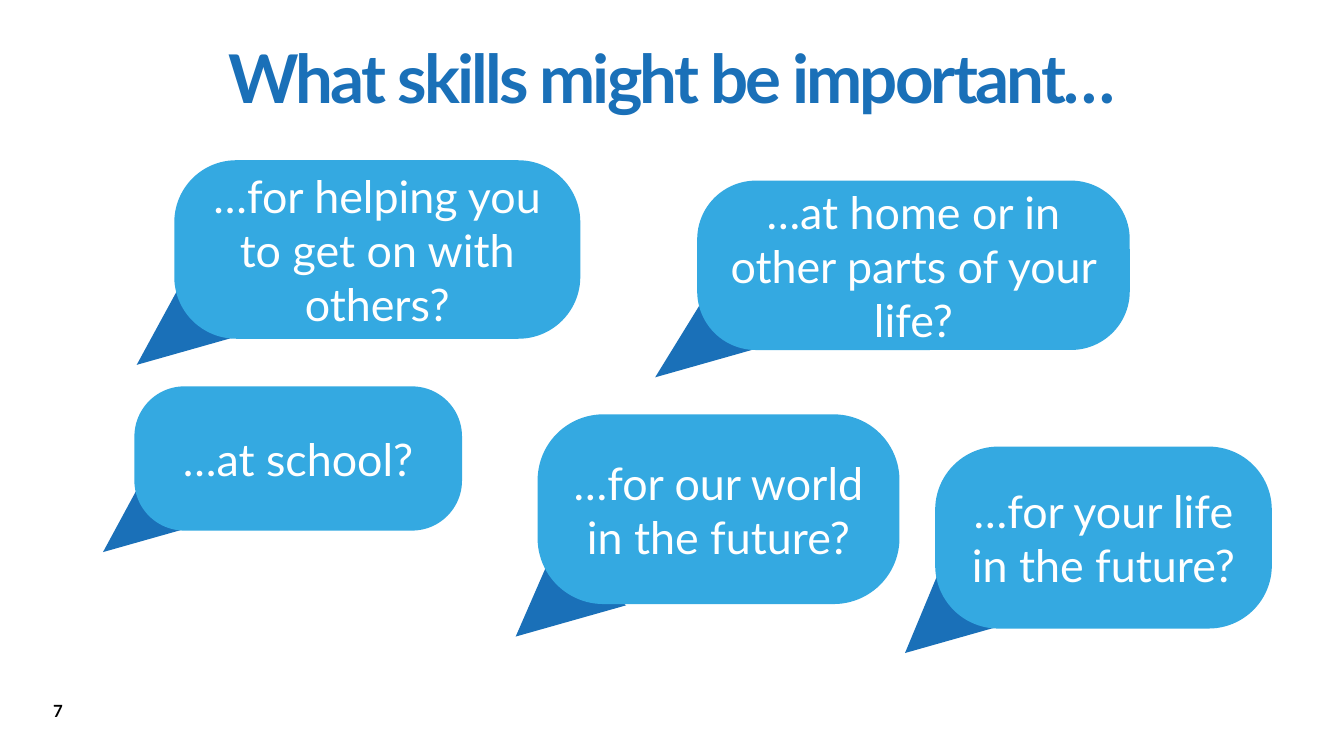
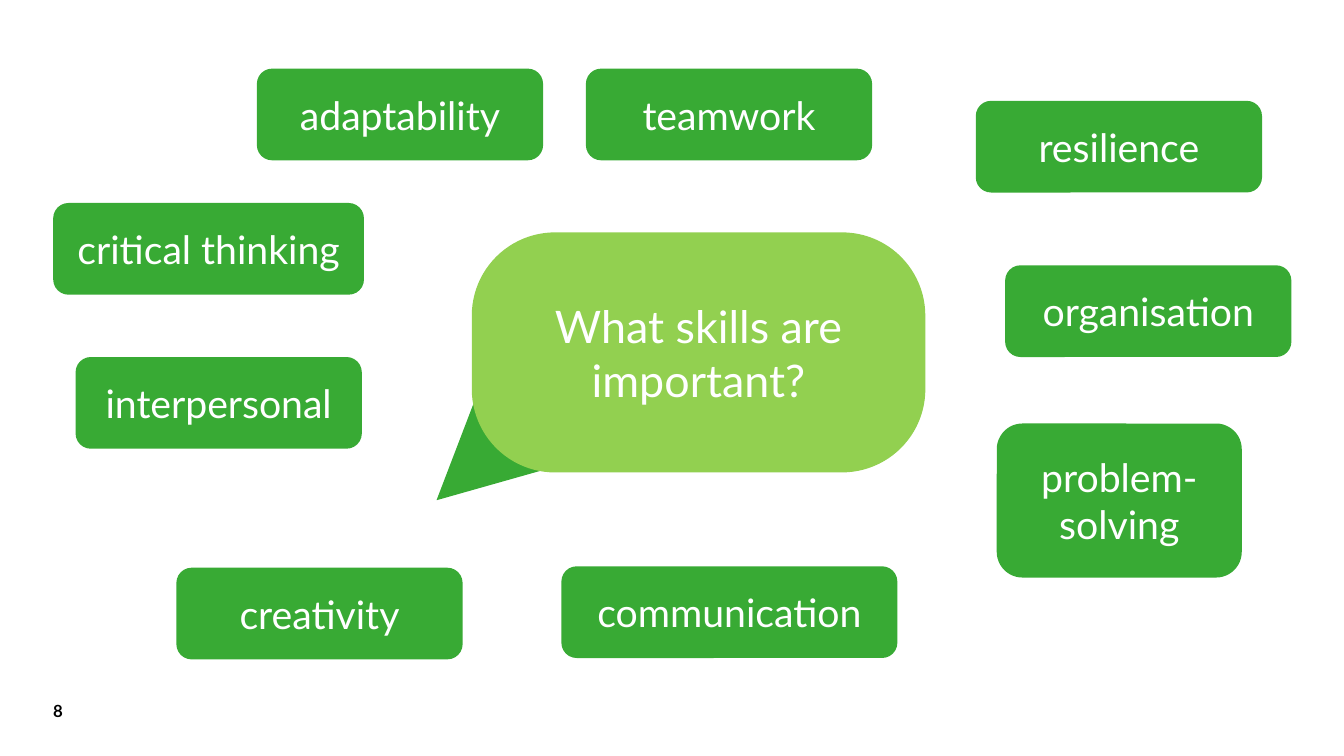
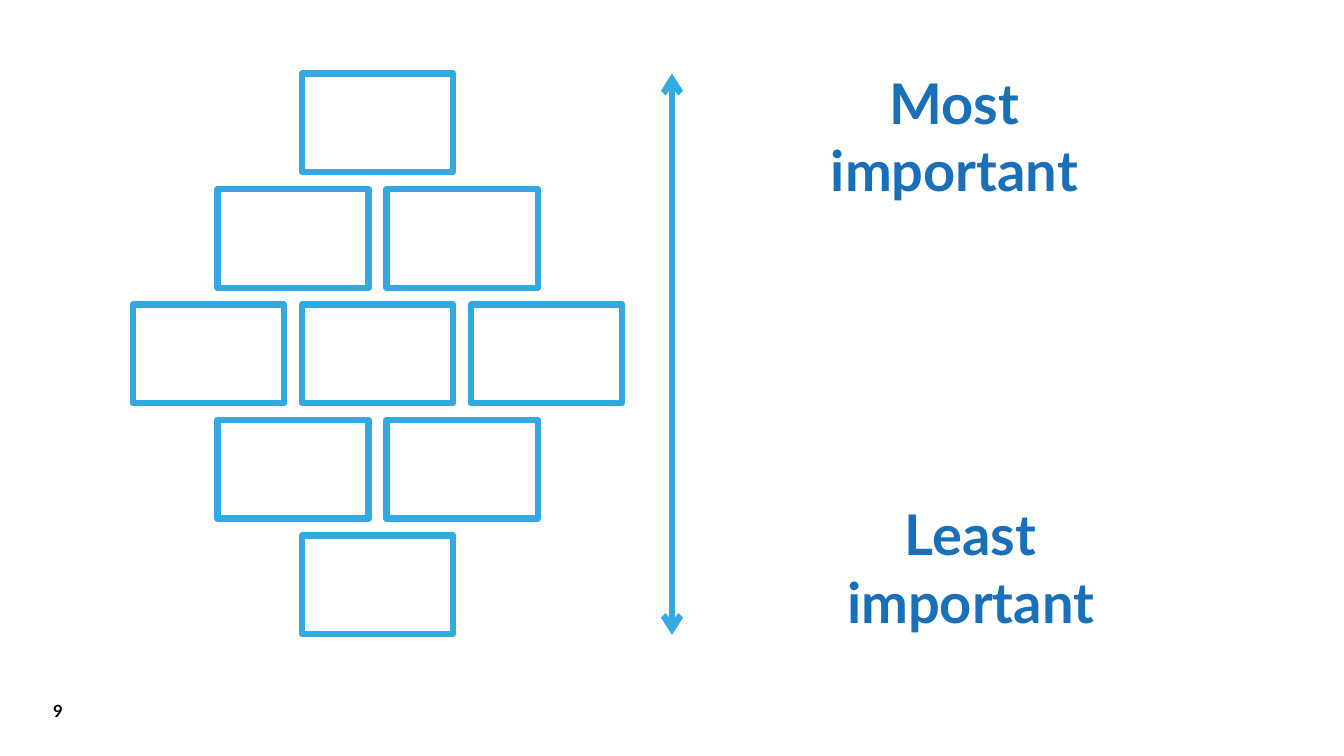
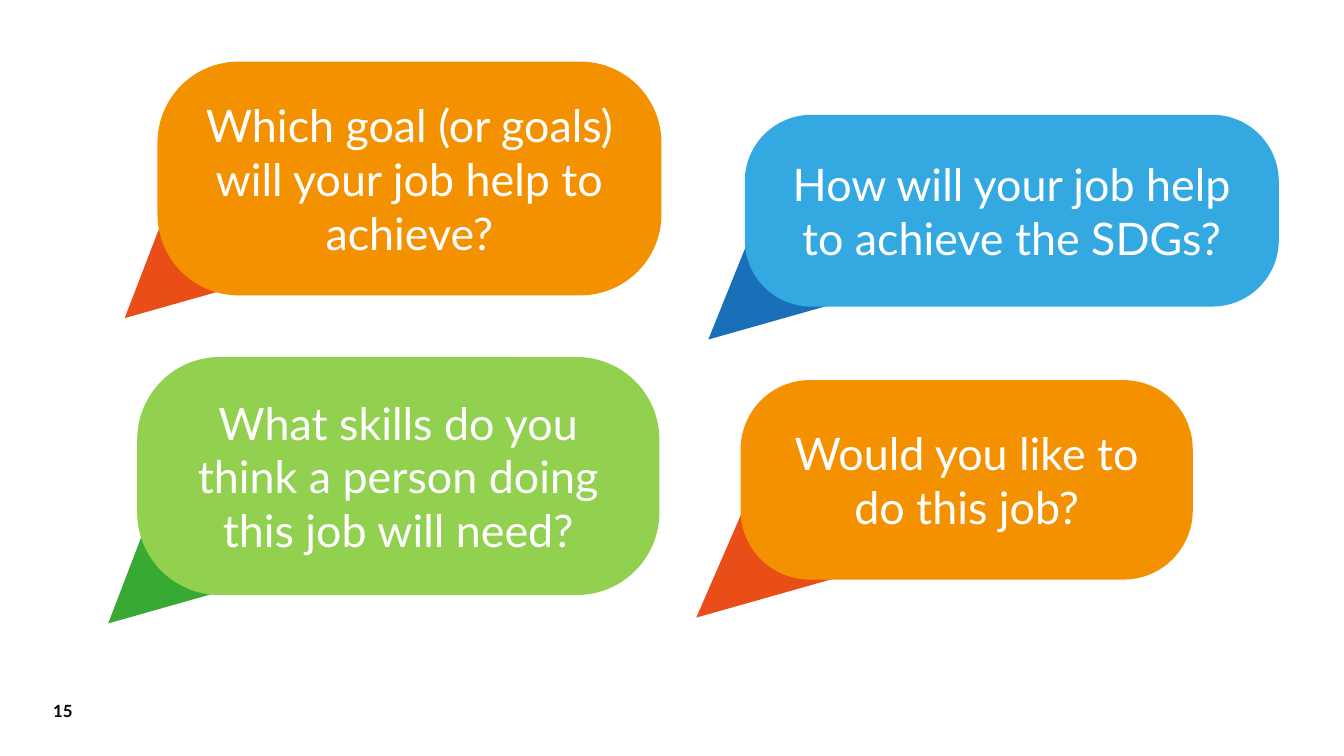
from lxml.etree import SubElement
from pptx import Presentation
from pptx.dml.color import RGBColor as RGB
from pptx.enum.shapes import MSO_CONNECTOR as LINE, MSO_SHAPE as KIND
from pptx.enum.text import MSO_ANCHOR as ANCHOR, PP_ALIGN as ALIGN
from pptx.oxml.ns import qn
from pptx.util import Pt

FONT = "Lato"
BLACK, WHITE = "000000", "FFFFFF"
NAVY, SKY = "1A70B8", "34A9E1"
GREEN, LIME = "38AA34", "92D050"
RED, ORANGE = "E94D18", "F39100"
BLUES, GREENS, WARMS = (SKY, NAVY), (LIME, GREEN), (ORANGE, RED)


def paint(item, color):
    if hasattr(item, "solid"):
        item.solid()
        item.fore_color.rgb = RGB.from_string(color)
    else:
        item.rgb = RGB.from_string(color)


def write(shape, text, size, color, bold=False, align=ALIGN.CENTER, anchor=ANCHOR.MIDDLE):
    frame = shape.text_frame
    frame.word_wrap = True
    frame.vertical_anchor = anchor
    frame.text = text
    para = frame.paragraphs[0]
    para.alignment = align
    font = para.runs[0].font
    font.name, font.size, font.bold = FONT, Pt(size), bold
    paint(font.color, color)
    return para


def add_text(slide, box, text, size, color, **style):
    shape = slide.shapes.add_textbox(*map(Pt, box))
    return shape, write(shape, text, size, color, **style)


def add_block(slide, kind, box, fill=None, edge=None):
    shape = slide.shapes.add_shape(kind, *map(Pt, box))
    shape.shadow.inherit = False
    if fill:
        paint(shape.fill, fill)
    else:
        shape.fill.background()
    if edge:
        paint(shape.line.fill, edge)
        shape.line.width = Pt(4.5)
    else:
        shape.line.fill.background()
    return shape


def add_label(slide, box, text):
    write(add_block(slide, KIND.ROUNDED_RECTANGLE, box, GREEN), text, 28, WHITE)


def add_bubble(slide, box, tail, text, colors):
    left, top, width, height = box
    shift, rise, wide, high = tail
    body, dark = colors
    tip = add_block(slide, KIND.ISOSCELES_TRIANGLE,
                    (left - shift, top + height - rise, wide, high), dark)
    tip.rotation = 344.2
    shape = add_block(slide, KIND.ROUNDED_RECTANGLE, box, body)
    shape.adjustments[0] = 0.347
    write(shape, text, 32, WHITE)


def add_title(slide, box, text):
    para = add_text(slide, box, text, 48, NAVY, bold=True)[1]
    para.line_spacing = 0.9
    para.runs[0].font._element.set("spc", "-200")


def add_cards(slide, box):
    left, top, width, height = box
    wide, high = 108, 70.5
    across, down = (width - wide) / 2, (height - high) / 4
    for row, count in enumerate((1, 2, 3, 2, 1)):
        start = left + (3 - count) * across / 2
        for col in range(count):
            card = (start + col * across, top + row * down, wide, high)
            add_block(slide, KIND.RECTANGLE, card, edge=SKY)


def add_scale(slide, x, top, end):
    line = slide.shapes.add_connector(LINE.STRAIGHT, Pt(x), Pt(top), Pt(x), Pt(end))
    paint(line.line.fill, SKY)
    line.line.width = Pt(4.5)
    stroke = line.line._get_or_add_ln()
    for end_name in ("a:headEnd", "a:tailEnd"):
        SubElement(stroke, qn(end_name), type="arrow")
    SubElement(line._element.spPr, qn("a:effectLst"))


def add_rank(slide, box, text):
    para = add_text(slide, box, text, 40, NAVY, bold=True, anchor=ANCHOR.TOP)[1]
    para.space_after = Pt(18)


def new_slide(deck, number):
    slide = deck.slides.add_slide(deck.slide_layouts[6])
    paint(slide.background.fill, WHITE)
    shape, _ = add_text(slide, (38, 492, 53, 23), str(number), 12, BLACK,
                        bold=True, align=ALIGN.LEFT, anchor=ANCHOR.BOTTOM)
    frame = shape.text_frame
    frame.margin_left = frame.margin_right = frame.margin_top = frame.margin_bottom = 0
    return slide


def ask_skills(deck):
    slide = new_slide(deck, 7)
    add_title(slide, (42.5, 21, 875, 75), "What skills might be important…")
    for box, tail, text in (
        ((384, 296, 258.5, 135.5), (24, 37, 82, 50), "…for our world in the future?"),
        ((498, 129, 309, 121), (38, 38, 98, 45), "…at home or in other parts of your life?"),
        ((96, 276, 234, 103), (29, 32, 74, 38), "…at school?"),
        ((668, 319, 240.5, 130), (29.5, 40, 76, 48), "…for your life in the future?"),
        ((124.5, 114.5, 290, 127.5), (35, 40, 92, 47), "…for helping you to get on with others?"),
    ):
        add_bubble(slide, box, tail, text, BLUES)


def list_skills(deck):
    slide = new_slide(deck, 8)
    wide, high = 204.5, 65.5
    for box, text in (
        ((38, 145, 222, high), "critical thinking"),
        ((418.5, 49, wide, high), "teamwork"),
        ((718, 189.5, wide, high), "organisation"),
        ((126, 405.5, wide, high), "creativity"),
        ((54, 255, wide, high), "interpersonal"),
        ((697, 72, wide, high), "resilience"),
        ((401, 404.5, 240, high), "communication"),
        ((183.5, 49, wide, high), "adaptability"),
        ((712, 302.5, 175, 110), "problem-solving"),
    ):
        add_label(slide, box, text)
    add_bubble(slide, (337, 166, 324, 171.5), (37.5, 69, 112, 75),
               "What skills are important?", GREENS)


def rank_skills(deck):
    slide = new_slide(deck, 9)
    add_cards(slide, (95, 52.5, 349.5, 400.5))
    add_scale(slide, 480, 52.5, 453.5)
    add_rank(slide, (541, 45.5, 281.5, 55.5), "Most important")
    add_rank(slide, (552.5, 353.5, 281.5, 55.5), "Least important")


def ask_job(deck):
    slide = new_slide(deck, 15)
    for box, tail, text, colors in (
        ((112.5, 44, 360, 167), (33, 52.5, 87, 58),
         "Which goal (or goals) will your job help to achieve?", WARMS),
        ((532, 82, 381.5, 137), (36, 48, 93, 60),
         "How will your job help to achieve the SDGs?", BLUES),
        ((98, 255, 373, 170), (33, 68.5, 112, 75),
         "What skills do you think a person doing this job will need?", GREENS),
        ((529, 271.5, 323, 142.5), (42, 47.5, 101.5, 62),
         "Would you like to do this job?", WARMS),
    ):
        add_bubble(slide, box, tail, text, colors)


def main():
    deck = Presentation()
    deck.slide_width, deck.slide_height = Pt(960), Pt(540)
    for build in (ask_skills, list_skills, rank_skills, ask_job):
        build(deck)
    deck.save("out.pptx")


if __name__ == "__main__":
    main()
